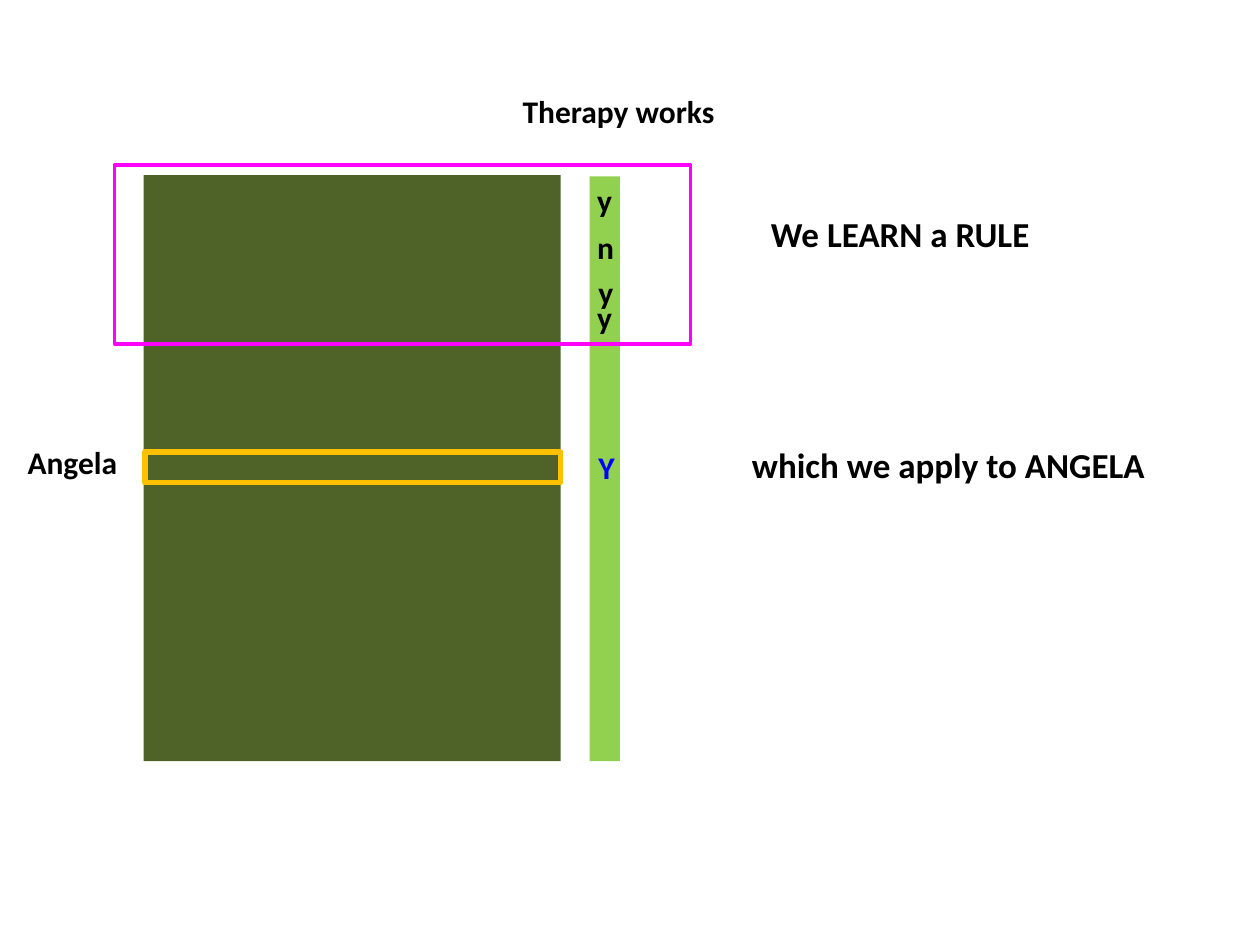
from pptx import Presentation
from pptx.dml.color import RGBColor
from pptx.enum.shapes import MSO_SHAPE as SHAPE
from pptx.enum.text import MSO_AUTO_SIZE as AUTO_SIZE
from pptx.util import Inches, Pt


def color(hex_code):
    return RGBColor.from_string(hex_code)


class SlideBuilder:
    """Holds the text style and the current slide."""
    font = "Calibri"
    black = "000000"

    def __init__(self, slide):
        self.slide = slide

    def rect(self, x, y, w, h, fill=None, line=None, line_pt=1, rotation=0):
        sp = self.slide.shapes.add_shape(
            SHAPE.RECTANGLE, Inches(x), Inches(y), Inches(w), Inches(h))
        sp.shadow.inherit = False
        sp.rotation = rotation
        if fill:
            sp.fill.solid()
            sp.fill.fore_color.rgb = color(fill)
        else:
            sp.fill.background()
        if line:
            sp.line.color.rgb = color(line)
            sp.line.width = Pt(line_pt)
        else:
            sp.line.fill.background()

    def label(self, text, x, y, w, h=0.4, size=18, ink=black, wrap=False):
        box = self.slide.shapes.add_textbox(
            Inches(x), Inches(y), Inches(w), Inches(h))
        tf = box.text_frame
        tf.word_wrap = wrap
        tf.auto_size = AUTO_SIZE.SHAPE_TO_FIT_TEXT
        r = tf.paragraphs[0].add_run()
        r.text = text
        r.font.name = self.font
        r.font.size = Pt(size)
        r.font.bold = True
        r.font.color.rgb = color(ink)


def main():
    prs = Presentation()
    prs.slide_width, prs.slide_height = Inches(10), Inches(7.5)
    s = SlideBuilder(prs.slides.add_slide(prs.slide_layouts[6]))

    # Data table with Angela's row
    s.rect(1.14, 1.39, 3.31, 4.65, fill="4F6228")
    s.rect(1.15, 3.59, 3.3, 0.24, line="FFC000", line_pt=3.25)
    s.label("Angela", 0.12, 3.47, 0.92)

    # Outcome column with Angela's predicted value
    s.rect(2.48, 3.6, 4.64, 0.24, fill="92D050", rotation=270)
    s.label("Therapy works", 4.05, 0.68, 1.74)
    s.label("Y", 4.65, 3.51, 0.33, ink="0000FF")

    # Training rows with known outcomes
    s.rect(0.91, 1.31, 4.57, 1.42, line="FF00FF", line_pt=2)
    for x, y in ((4.64, 1.39), (4.64, 2.32), (4.65, 2.12)):
        s.label("y", x, y, 0.32)
    s.label("n", 4.64, 1.76, 0.28, wrap=True)

    s.label("We LEARN a RULE", 6.02, 1.64, 2.28, 0.44, size=20)
    s.label("which we apply to ANGELA", 5.87, 3.47, 3.34, 0.44, size=20)

    prs.save("out.pptx")


if __name__ == "__main__":
    main()
